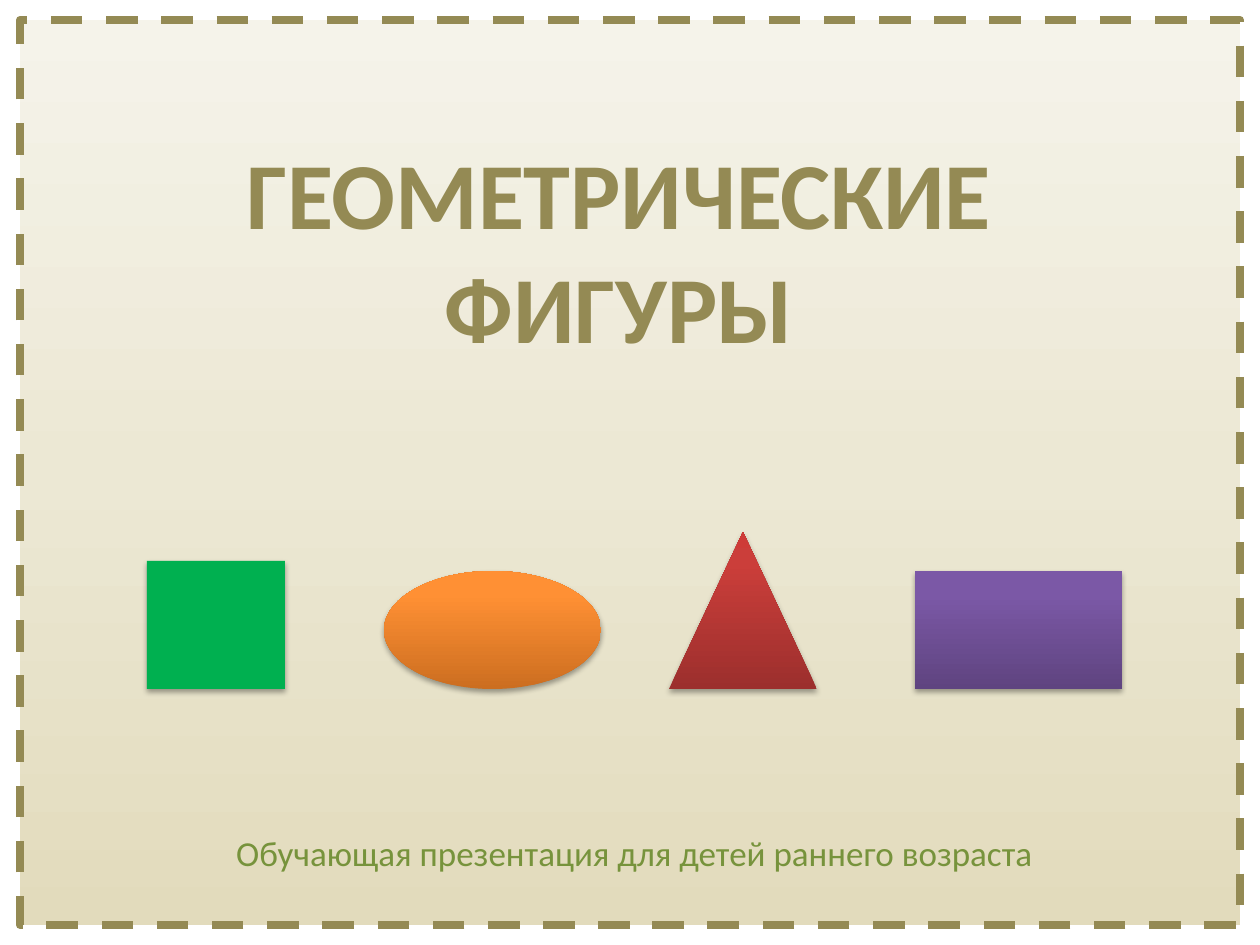
from lxml import etree
from pptx import Presentation
from pptx.dml.color import RGBColor
from pptx.enum.dml import MSO_LINE
from pptx.enum.shapes import MSO_SHAPE as SHAPE
from pptx.enum.text import MSO_ANCHOR as ANCHOR, PP_ALIGN as ALIGN
from pptx.oxml import parse_xml
from pptx.oxml.ns import nsdecls, qn
from pptx.util import Pt

PX = 914400 / 126
COLORS = {
    "olive": "948A54",
    "leaf": "77933C",
    "green": "00B050",
    "shadow": "000000",
}
GRADIENTS = {
    "sand": [(0, "E2DBBC"), (50, "ECE8D4"), (100, "F5F3EA")],
    "orange": [(0, "CC6E20"), (80, "FF9034"), (100, "FF9136")],
    "red": [(0, "9C2F2D"), (80, "CB3E3A"), (100, "CE3B37")],
    "purple": [(0, "5F4480"), (80, "7B58A6"), (100, "7C57A8")],
}


def place(sp, *box):
    sp.left, sp.top, sp.width, sp.height = [round(v * PX) for v in box]


def add_figure(kind, box, color):
    sp = s.shapes.add_shape(kind, *[round(v * PX) for v in box])
    sp.shadow.inherit = False
    sp.line.fill.background()
    if color in COLORS:
        sp.fill.solid()
        sp.fill.fore_color.rgb = RGBColor.from_string(COLORS[color])
        return sp
    sp.fill.gradient()
    grad = sp._element.spPr.find(qn("a:gradFill"))
    stops = grad.find(qn("a:gsLst"))
    for old in list(stops):
        stops.remove(old)
    for pos, rgb in GRADIENTS[color]:
        gs = etree.SubElement(stops, qn("a:gs"), pos=str(pos * 1000))
        etree.SubElement(gs, qn("a:srgbClr"), val=rgb)
    grad.find(qn("a:lin")).set("ang", str(270 * 60000))
    return sp


prs = Presentation()
prs.slide_width = round(1260 * PX)
prs.slide_height = round(945 * PX)
s = prs.slides.add_slide(prs.slide_layouts[0])
title, subtitle = s.placeholders

frame = add_figure(SHAPE.RECTANGLE, (20, 20, 1220, 905), "sand")
frame.line.color.rgb = RGBColor.from_string(COLORS["olive"])
frame.line.width = Pt(4.5)
frame.line.dash_style = MSO_LINE.DASH
title._element.addprevious(frame._element)

place(title, 78, 129, 1082, 242)
place(subtitle, 69, 798, 1131, 108)
for sp, text, size, bold, color, anchor in [
    (title, "ГЕОМЕТРИЧЕСКИЕ ФИГУРЫ", 54, True, "olive", ANCHOR.TOP),
    (subtitle, "Обучающая презентация для детей раннего возраста", 20, False, "leaf", ANCHOR.MIDDLE),
]:
    tf = sp.text_frame
    tf.text = text
    tf.word_wrap = True
    tf.vertical_anchor = anchor
    p = tf.paragraphs[0]
    p.alignment = ALIGN.CENTER
    p.space_before = Pt(0)
    p.font.name = "Calibri"
    p.font.size = Pt(size)
    p.font.bold = bold
    p.font.color.rgb = RGBColor.from_string(COLORS[color])

BASELINE = 689
for kind, left, width, height, color in [
    (SHAPE.RECTANGLE, 147, 138, 128, "green"),
    (SHAPE.OVAL, 384, 217, 118, "orange"),
    (SHAPE.ISOSCELES_TRIANGLE, 669, 148, 157, "red"),
    (SHAPE.RECTANGLE, 915, 207, 118, "purple"),
]:
    sp = add_figure(kind, (left, BASELINE - height, width, height), color)
    sp._element.spPr.find(qn("a:effectLst")).append(parse_xml(
        f'<a:outerShdw {nsdecls("a")} blurRad="40000" dist="23000" dir="5400000" rotWithShape="0">'
        f'<a:srgbClr val="{COLORS["shadow"]}"><a:alpha val="35000"/></a:srgbClr></a:outerShdw>'))

prs.save("out.pptx")
